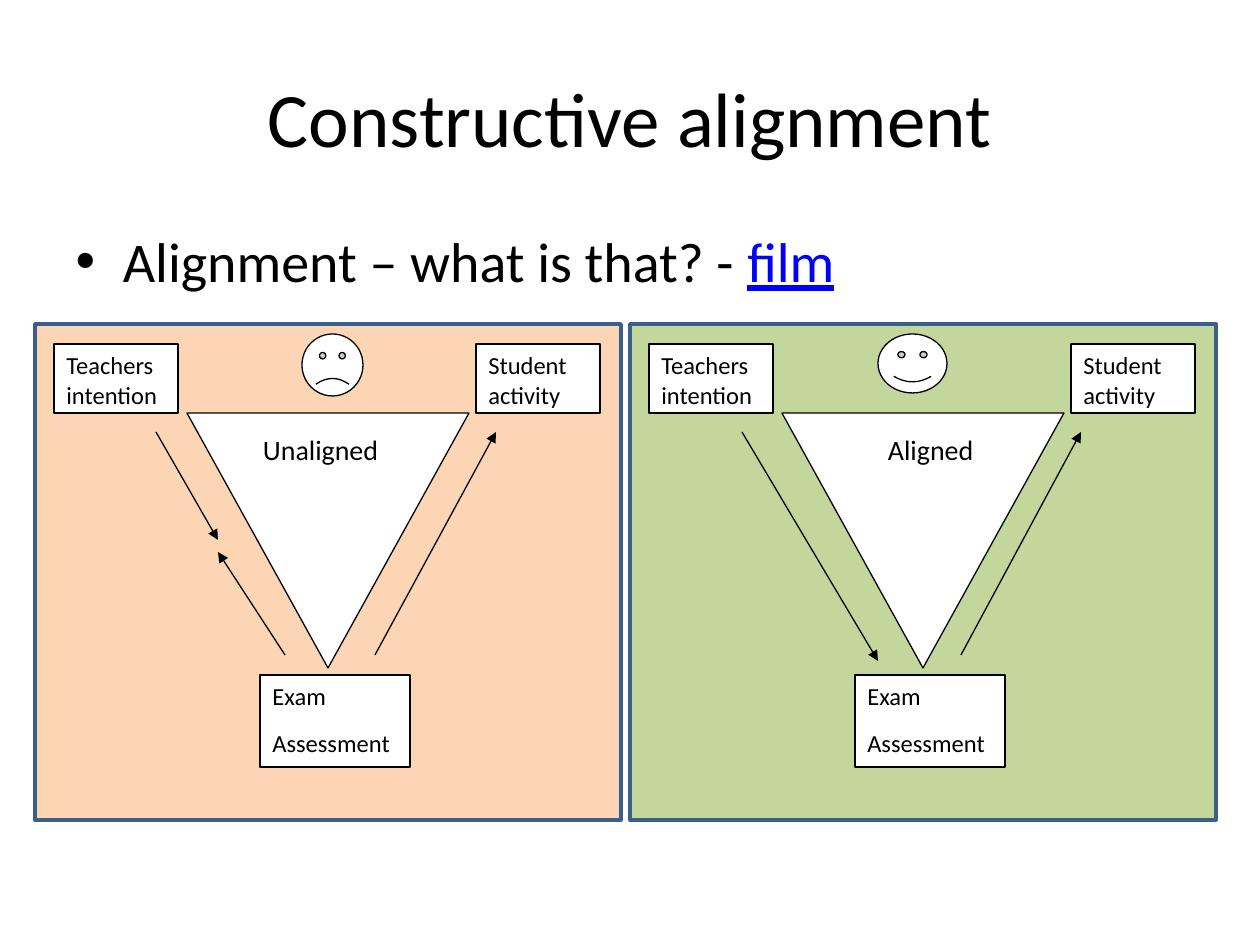
from lxml import etree
from pptx import Presentation
from pptx.dml.color import RGBColor
from pptx.enum.shapes import MSO_CONNECTOR, MSO_SHAPE
from pptx.enum.text import MSO_ANCHOR, PP_ALIGN
from pptx.oxml.ns import qn
from pptx.util import Emu, Pt

PIXEL = 914400 // 126
FONT = "Calibri"
BLACK = RGBColor(0x00, 0x00, 0x00)
WHITE = RGBColor(0xFF, 0xFF, 0xFF)
LINK_BLUE = RGBColor(0x00, 0x00, 0xFF)
FRAME_BLUE = RGBColor(0x3A, 0x5F, 0x8C)
PEACH = RGBColor(0xFC, 0xD5, 0xB5)
GREEN = RGBColor(0xC3, 0xD6, 0x9B)

PANEL_TOP = 324
# Boxes at the triangle corners, measured from the panel's left edge
CORNER_BOXES = [
    ("Teachers\u0020intention", (19, 344, 124, 69)),
    ("Student activity", (441, 344, 124, 69)),
    ("Exam\nAssessment", (225, 675, 150, 92)),
]


def px(*lengths):
    return [Emu(length * PIXEL) for length in lengths]


def format_text(text_frame, size, color=BLACK):
    for para in text_frame.paragraphs:
        for span in para.runs:
            span.font.name = FONT
            span.font.size = Pt(size)
            span.font.color.rgb = color


def fill_placeholder(placeholder, bounds, size, *parts):
    placeholder.left, placeholder.top, placeholder.width, placeholder.height = px(*bounds)
    para = placeholder.text_frame.paragraphs[0]
    para.space_before = Pt(0)
    for part in parts:
        para.add_run().text = part
    format_text(placeholder.text_frame, size)
    return para


def add_figure(page, kind, bounds, fill=WHITE, line=BLACK, line_width=0.75):
    shape = page.shapes.add_shape(kind, *px(*bounds))
    shape.shadow.inherit = False
    shape.fill.solid()
    shape.fill.fore_color.rgb = fill
    if line is None:
        shape.line.fill.background()
    else:
        shape.line.color.rgb = line
        shape.line.width = Pt(line_width)
    return shape


def add_label(page, text, bounds, size, line=BLACK, inset=True):
    box = add_figure(page, MSO_SHAPE.RECTANGLE, bounds, line=line)
    frame = box.text_frame
    frame.word_wrap = inset
    frame.vertical_anchor = MSO_ANCHOR.TOP
    if not inset:
        frame.margin_left = frame.margin_right = 0
        frame.margin_top = frame.margin_bottom = 0
    frame.text = text
    for para in frame.paragraphs:
        para.alignment = PP_ALIGN.LEFT
        para.space_after = Pt(10)
    format_text(frame, size)


def add_arrow(page, start, end):
    arrow = page.shapes.add_connector(MSO_CONNECTOR.STRAIGHT, *px(*start, *end))
    arrow.line.color.rgb = BLACK
    arrow.line.width = Pt(0.75)
    line = arrow.line._get_or_add_ln()
    etree.SubElement(line, qn("a:tailEnd"), type="triangle")
    etree.SubElement(line.getparent(), qn("a:effectLst"))


def add_panel(page, left, fill, caption, caption_bounds, face_bounds, smile, arrows):
    add_figure(page, MSO_SHAPE.RECTANGLE, (left, PANEL_TOP, 586, 496), fill, FRAME_BLUE, 2)
    triangle = add_figure(page, MSO_SHAPE.ISOSCELES_TRIANGLE, (left + 152, 413, 282, 255))
    triangle.rotation = 180
    for text, (x, y, width, height) in CORNER_BOXES:
        add_label(page, text, (left + x, y, width, height), 14)
    for start, end in arrows:
        add_arrow(page, start, end)
    face = add_figure(page, MSO_SHAPE.SMILEY_FACE, face_bounds)
    face.adjustments[0] = smile
    add_label(page, caption, caption_bounds, 16, line=None, inset=False)


def main():
    deck = Presentation()
    deck.slide_width, deck.slide_height = px(1260, 945)
    page = deck.slides.add_slide(deck.slide_layouts[1])

    # Title and question
    title = page.shapes.title
    fill_placeholder(title, (63, 38, 1134, 157), 44, "Constructive alignment")
    title.text_frame.vertical_anchor = MSO_ANCHOR.MIDDLE
    question = fill_placeholder(page.placeholders[1], (63, 220, 1134, 113), 32,
                                "Alignment – what is that? - ", "film")
    link = question.runs[1]
    link.font.color.rgb = LINK_BLUE
    link.font.underline = True

    # Unaligned teaching: the arrows on the left side collide
    add_panel(page, 35, PEACH, "Unaligned", (263, 433, 128, 34), (302, 334, 61, 62), -0.047,
              [((156, 432), (218, 540)), ((285, 655), (218, 552)), ((375, 655), (496, 432))])

    # Aligned teaching: the arrows run from intention to activity
    add_panel(page, 630, GREEN, "Aligned", (888, 433, 100, 34), (878, 334, 69, 59), 0.047,
              [((742, 432), (878, 661)), ((961, 655), (1081, 432))])

    deck.save("out.pptx")


if __name__ == "__main__":
    main()
